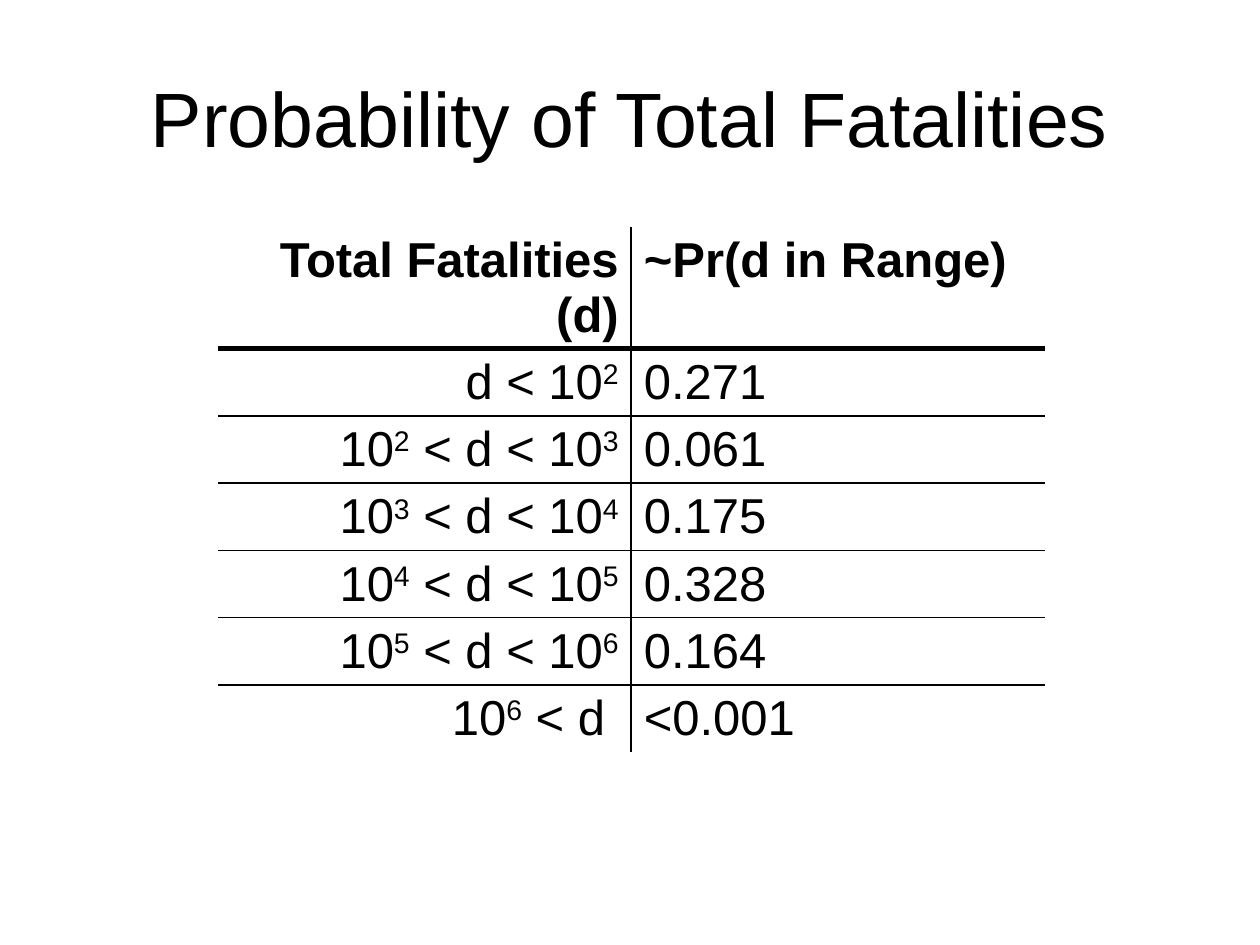
from dataclasses import dataclass

from lxml import etree
from pptx import Presentation
from pptx.dml.color import RGBColor
from pptx.enum.text import MSO_ANCHOR, PP_ALIGN
from pptx.oxml.ns import qn
from pptx.table import _Cell
from pptx.text.text import _Paragraph
from pptx.util import Inches, Pt

BLACK = RGBColor(0, 0, 0)
FONT_NAME = "Arial"
LEFT, CENTER, RIGHT = PP_ALIGN.LEFT, PP_ALIGN.CENTER, PP_ALIGN.RIGHT
MIDDLE = MSO_ANCHOR.MIDDLE

TITLE_SIZE, TABLE_SIZE = 44, 28
THIN, THICK = 1, 3
SUPERSCRIPT = "30000"
COLUMN_WIDTH = Inches(3.28)
HEADER_HEIGHT, ROW_HEIGHT = Inches(0.96), Inches(0.53)


@dataclass
class Row:
    """One table row; a caret raises the digit that follows it."""
    fatalities: str
    probability: str


ROWS = [
    Row("Total Fatalities (d)", "~Pr(d in Range)"),
    Row("d < 10^2", "0.271"),
    *(Row(f"10^{power} < d < 10^{power + 1}", probability)
      for power, probability in enumerate(("0.061", "0.175", "0.328", "0.164"), start=2)),
    Row("10^6 < d ", "<0.001"),
]


def format_paragraph(paragraph: _Paragraph, size: float, alignment: PP_ALIGN,
                     bold: bool = False) -> None:
    paragraph.alignment = alignment
    font = paragraph.font
    font.name, font.size, font.bold = FONT_NAME, Pt(size), bold
    font.color.rgb = BLACK


def add_powers(paragraph: _Paragraph, text: str) -> None:
    """Write the text, raising each digit marked by a caret."""
    start, *powers = text.split("^")
    paragraph.add_run().text = start
    for power in powers:
        exponent = paragraph.add_run()
        exponent.text = power[0]
        exponent.font._element.set("baseline", SUPERSCRIPT)
        if power[1:]:
            paragraph.add_run().text = power[1:]


def set_borders(cell: _Cell, left: float, right: float, top: float, bottom: float) -> None:
    """Set the line widths of a cell in points; zero hides a line."""
    properties = cell._tc.get_or_add_tcPr()
    for tag, width in (("a:lnL", left), ("a:lnR", right), ("a:lnT", top), ("a:lnB", bottom)):
        line = etree.SubElement(properties, qn(tag), w=str(Pt(width)))
        if width:
            fill = etree.SubElement(line, qn("a:solidFill"))
            etree.SubElement(fill, qn("a:srgbClr"), val=str(BLACK))
        else:
            etree.SubElement(line, qn("a:noFill"))


def rule_above(row_index: int) -> int:
    """Width of the rule above a row; the outer edges have none."""
    if row_index in (0, len(ROWS)):
        return 0
    return THICK if row_index == 1 else THIN


def main() -> None:
    presentation = Presentation()
    presentation.slide_width, presentation.slide_height = Inches(10), Inches(7.5)
    slide = presentation.slides.add_slide(presentation.slide_layouts[5])

    # Title
    title = slide.shapes.title
    title.left, title.top = Inches(0.5), Inches(0.3)
    title.width, title.height = Inches(9), Inches(1.25)
    title.text_frame.text = "Probability of Total Fatalities"
    title.text_frame.vertical_anchor = MIDDLE
    format_paragraph(title.text_frame.paragraphs[0], TITLE_SIZE, CENTER)

    # Table grid
    table = slide.shapes.add_table(
        len(ROWS), 2, Inches(1.73), Inches(1.8), 2 * COLUMN_WIDTH,
        HEADER_HEIGHT + (len(ROWS) - 1) * ROW_HEIGHT).table
    table.first_row = table.horz_banding = False
    for column in table.columns:
        column.width = COLUMN_WIDTH

    # Table contents and rules
    for row_index, row in enumerate(ROWS):
        is_header = row_index == 0
        table.rows[row_index].height = HEADER_HEIGHT if is_header else ROW_HEIGHT
        for column_index, text in enumerate((row.fatalities, row.probability)):
            cell = table.cell(row_index, column_index)
            paragraph = cell.text_frame.paragraphs[0]
            add_powers(paragraph, text)
            format_paragraph(paragraph, TABLE_SIZE, LEFT if column_index else RIGHT, is_header)
            set_borders(cell, THIN * column_index, THIN * (1 - column_index),
                        rule_above(row_index), rule_above(row_index + 1))
            cell.fill.background()

    presentation.save("out.pptx")


if __name__ == "__main__":
    main()
